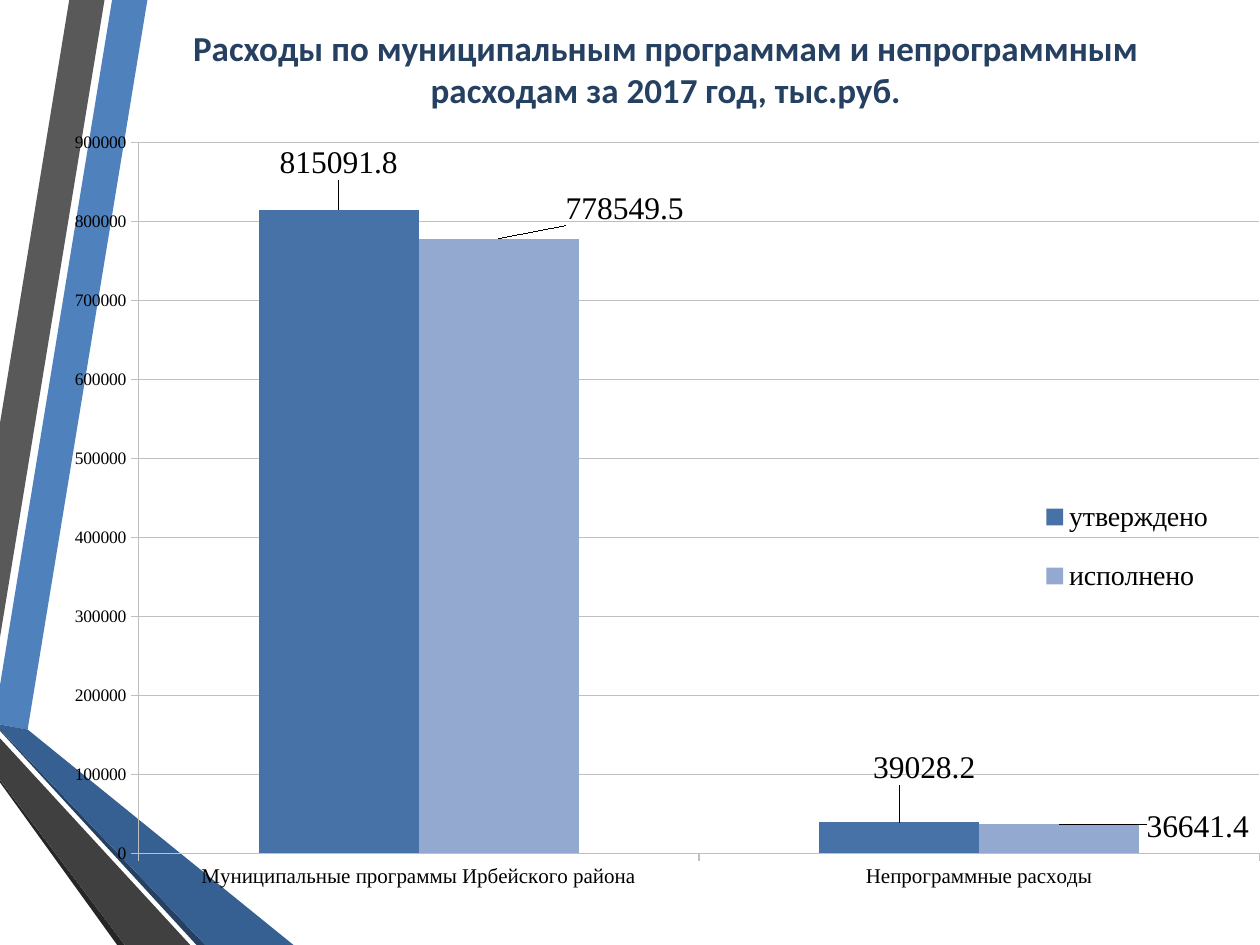
from lxml import etree
from pptx import Presentation
from pptx.chart.data import CategoryChartData
from pptx.dml.color import RGBColor
from pptx.enum.chart import XL_CHART_TYPE, XL_LABEL_POSITION, XL_LEGEND_POSITION, XL_TICK_MARK
from pptx.enum.text import MSO_ANCHOR, PP_ALIGN
from pptx.oxml.ns import qn
from pptx.util import Inches, Pt

COLUMN = XL_CHART_TYPE.COLUMN_CLUSTERED
ABOVE = XL_LABEL_POSITION.OUTSIDE_END
RIGHT = XL_LEGEND_POSITION.RIGHT
TICK = XL_TICK_MARK.OUTSIDE
MIDDLE = MSO_ANCHOR.MIDDLE
CENTER = PP_ALIGN.CENTER

NAVY = RGBColor(0x25, 0x40, 0x61)
BLUE = RGBColor(0x4F, 0x81, 0xBD)
DEEP = RGBColor(0x37, 0x60, 0x92)
GRAY = RGBColor(0x59, 0x59, 0x59)
DARK = RGBColor(0x40, 0x40, 0x40)
COAL = RGBColor(0x26, 0x26, 0x26)
BLACK = RGBColor(0, 0, 0)
GRID = RGBColor(0xC0, 0xC0, 0xC0)
STEEL = RGBColor(0x46, 0x72, 0xA8)
PALE = RGBColor(0x94, 0xA9, 0xCF)

SANS = "Calibri"
SERIF = "Times New Roman"

BANDS = [
    (BLUE, [(0, 5.44), (0, 5.75), (0.22, 5.79), (1.17, 0), (0.89, 0)]),
    (GRAY, [(0.83, 0), (0.55, 0), (0, 3.36), (0, 5.06)]),
    (COAL, [(0, 6.19), (0, 6.21), (0.93, 7.5), (0.99, 7.5)]),
    (NAVY, [(0, 5.79), (0, 5.8), (1.56, 7.5), (1.63, 7.5)]),
    (DEEP, [(0, 5.79), (1.63, 7.5), (2.33, 7.5), (0.22, 5.79), (0, 5.75)]),
    (DARK, [(0, 6.19), (0.99, 7.5), (1.51, 7.5), (0, 5.86)]),
]

TITLE = "Расходы по муниципальным программам и непрограммным расходам за 2017 год, тыс.руб."
GROUPS = ["Муниципальные программы Ирбейского района", "Непрограммные расходы"]
# name, colour, values, label shifts as shares of the chart size
SERIES = [
    ("утверждено", STEEL, (815091.8, 39028.2), ((0, -0.03), (0.02, -0.04))),
    ("исполнено", PALE, (778549.5, 36641.4), ((0.1, -0.01), (0.11, 0.03))),
]


def style(target, **values):
    for key, value in values.items():
        setattr(target, key, value)


def set_font(font, name, size, color=BLACK, bold=False):
    style(font, name=name, size=Pt(size), bold=bold)
    font.color.rgb = color


def set_layout(parent, index, **values):
    """Give a chart part a manual layout, as its child at index."""
    for old in parent.findall(qn("c:layout")):
        parent.remove(old)
    layout = etree.Element(qn("c:layout"))
    manual = etree.SubElement(layout, qn("c:manualLayout"))
    for key, value in values.items():
        etree.SubElement(manual, qn("c:" + key)).set("val", str(value))
    parent.insert(index, layout)


def add_band(slide, color, points):
    spots = [(Inches(x), Inches(y)) for x, y in points]
    pen = slide.shapes.build_freeform(*spots[0])
    pen.add_line_segments(spots[1:], close=True)
    band = pen.convert_to_shape()
    band.shadow.inherit = False
    band.fill.solid()
    band.fill.fore_color.rgb = color
    band.line.fill.background()


def set_title(slide):
    title = slide.shapes.title
    style(title, left=Inches(1.07), top=0, width=Inches(8.43), height=Inches(1.09))
    frame = title.text_frame
    style(frame, text=TITLE, vertical_anchor=MIDDLE, word_wrap=True)
    para = frame.paragraphs[0]
    para.alignment = CENTER
    set_font(para.runs[0].font, SANS, 20, NAVY, True)


def set_axis(axis, size):
    style(axis, major_tick_mark=TICK)
    set_font(axis.tick_labels.font, SERIF, size)
    axis.format.line.color.rgb = GRID


def set_series(series, color, shifts):
    series.format.fill.solid()
    series.format.fill.fore_color.rgb = color
    series.invert_if_negative = False
    for index, (x, y) in enumerate(shifts):
        label = series.points[index].data_label
        set_font(label.font, SERIF, 18)
        label.position = ABOVE
    shown = series.data_labels
    style(shown, show_value=True, position=ABOVE)
    set_font(shown.font, SERIF, 18)
    marks = series._element.iter(qn("c:dLbl"))
    for mark, (x, y) in zip(marks, shifts):
        set_layout(mark, 1, x=x, y=y)


def set_legend(chart):
    chart.has_legend = True
    legend = chart.legend
    style(legend, position=RIGHT, include_in_layout=False)
    set_font(legend.font, SERIF, 16)
    set_layout(legend._element, 1, xMode="edge", yMode="edge",
               x=0.82, y=0.44, w=0.15, h=0.18)


def add_chart(slide):
    data = CategoryChartData()
    data.categories = GROUPS
    for name, _, values, _ in SERIES:
        data.add_series(name, values)
    frame = slide.shapes.add_chart(COLUMN, 0, Inches(0.94), Inches(10), Inches(6.41), data)
    chart = frame.chart
    chart.has_title = False
    set_font(chart.font, SANS, 18)
    plot = chart.plots[0]
    style(plot, gap_width=150, overlap=0, vary_by_categories=False)
    for series, (_, color, _, shifts) in zip(plot.series, SERIES):
        set_series(series, color, shifts)
    set_axis(chart.category_axis, 12)
    scale = chart.value_axis
    set_axis(scale, 10)
    style(scale, minimum_scale=0, maximum_scale=900000, major_unit=100000)
    scale.major_gridlines.format.line.color.rgb = GRID
    set_legend(chart)
    area = chart._chartSpace.find(".//" + qn("c:plotArea"))
    set_layout(area, 0, layoutTarget="inner", xMode="edge", yMode="edge",
               x=0.11, y=0.03, w=0.89, h=0.88)


def main():
    deck = Presentation()
    style(deck, slide_width=Inches(10), slide_height=Inches(7.5))
    slide = deck.slides.add_slide(deck.slide_layouts[5])
    for color, points in BANDS:
        add_band(slide, color, points)
    set_title(slide)
    add_chart(slide)
    deck.save("out.pptx")


if __name__ == "__main__":
    main()
